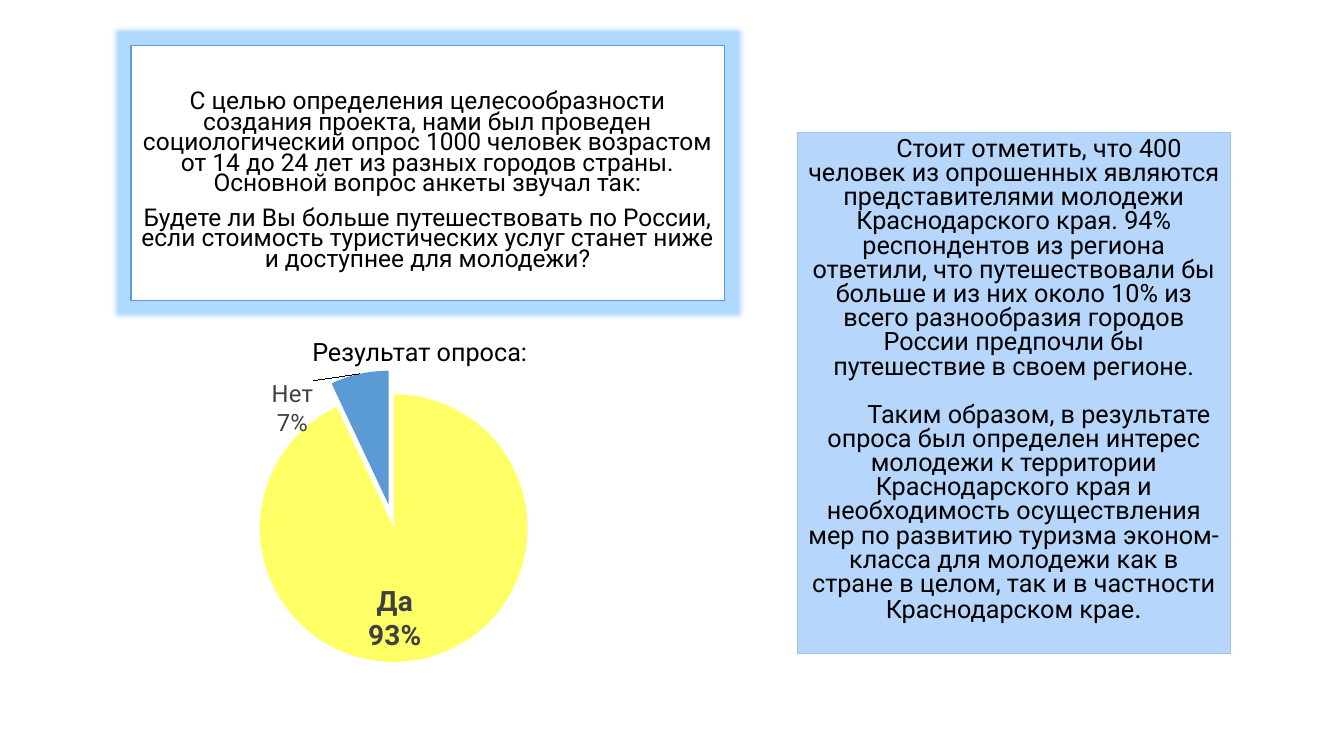
from lxml import etree
from pptx import Presentation
from pptx.chart.data import CategoryChartData
from pptx.dml.color import RGBColor
from pptx.enum.chart import XL_CHART_TYPE, XL_LABEL_POSITION
from pptx.enum.shapes import MSO_SHAPE
from pptx.enum.text import MSO_ANCHOR, PP_ALIGN
from pptx.oxml import parse_xml
from pptx.oxml.ns import nsdecls, qn
from pptx.util import Cm, Pt

RECT = MSO_SHAPE.RECTANGLE
PIE = XL_CHART_TYPE.PIE
IN_END = XL_LABEL_POSITION.INSIDE_END
OUT_END = XL_LABEL_POSITION.OUTSIDE_END
TOP = MSO_ANCHOR.TOP
MID = PP_ALIGN.CENTER

FONT = "Roboto"
BLACK = RGBColor(0x00, 0x00, 0x00)
WHITE = RGBColor(0xFF, 0xFF, 0xFF)
GREY = RGBColor(0x40, 0x40, 0x40)
BLUE = RGBColor(0x5B, 0x9B, 0xD5)
PALE = RGBColor(0x9D, 0xC3, 0xE6)
SKY = RGBColor(0x76, 0xB2, 0xFA)
HALO = RGBColor(0xAF, 0xD9, 0xFF)
YELLOW = RGBColor(0xFF, 0xFF, 0x66)

SURVEY = [
    "С целью определения целесообразности создания проекта, нами был проведен "
    "социологический опрос 1000 человек возрастом от 14 до 24 лет из разных "
    "городов страны. Основной вопрос анкеты звучал так:",
    "Будете ли Вы больше путешествовать по России, если стоимость туристических "
    "услуг станет ниже и доступнее для молодежи?",
]
REGION = [
    "Стоит отметить, что 400 человек из опрошенных являются представителями "
    "молодежи Краснодарского края. 94% респондентов из региона ответили, что "
    "путешествовали бы больше и из них около 10% из всего разнообразия городов "
    "России предпочли бы путешествие в своем регионе.",
    "Таким образом, в результате опроса был определен интерес молодежи к "
    "территории Краснодарского края и необходимость осуществления мер по "
    "развитию туризма эконом-класса для молодежи как в стране в целом, так и "
    "в частности Краснодарском крае",
]


def set_font(font, size, color=BLACK, bold=False):
    font.name, font.size, font.bold = FONT, Pt(size), bold
    font.color.rgb = color


def add_box(slide, place, fill, line, width):
    box = slide.shapes.add_shape(RECT, *map(Cm, place))
    box.shadow.inherit = False
    box.fill.solid()
    box.fill.fore_color.rgb = fill
    box.line.color.rgb = line
    box.line.width = Pt(width)
    box.text_frame.word_wrap = True
    box.text_frame.vertical_anchor = TOP
    return box


def add_text(frame, texts, size, spacing, gap, indent=0):
    for i, text in enumerate(texts):
        para = frame.add_paragraph() if i else frame.paragraphs[0]
        para.add_run().text = text
        para.alignment = MID
        para.line_spacing = spacing
        para.space_before = Pt(gap if i else 0)
        if indent:
            para._p.get_or_add_pPr().set("indent", str(Cm(indent)))
        set_font(para.font, size)


def add_glow(box, color, radius):
    effects = box._element.spPr.find(qn("a:effectLst"))
    glow = etree.SubElement(effects, qn("a:glow"), rad=str(Cm(radius)))
    etree.SubElement(glow, qn("a:srgbClr"), val=str(color))


def set_alpha(box, percent):
    color = box._element.spPr.find(qn("a:solidFill"))[0]
    etree.SubElement(color, qn("a:alpha"), val=str(percent * 1000))


def make_layout(modes, **sizes):
    parts = "".join(f'<c:{key} val="{val}"/>' for key, val in sizes.items())
    return parse_xml(f'<c:layout {nsdecls("c")}><c:manualLayout>{modes}{parts}'
                     "</c:manualLayout></c:layout>")


def set_plot(chart, x, y, w, h):
    area = chart._chartSpace.chart.plotArea
    for old in area.findall(qn("c:layout")):
        area.remove(old)
    modes = '<c:layoutTarget val="inner"/><c:xMode val="edge"/><c:yMode val="edge"/>'
    area.insert(0, make_layout(modes, x=x, y=y, w=w, h=h))


def style_slice(point, color, size, bold, place):
    point.format.fill.solid()
    point.format.fill.fore_color.rgb = color
    set_font(point.data_label.font, size, GREY, bold)
    point.data_label.position = place


def add_pie(slide, place):
    data = CategoryChartData()
    data.categories = ["Да", "Нет"]
    data.add_series("Series 1", (93, 7))
    chart = slide.shapes.add_chart(PIE, *map(Cm, place), data).chart
    chart.has_legend = chart.has_title = False
    set_font(chart.font, 10)
    set_plot(chart, 0.16, 0.28, 0.54, 0.58)

    series = chart.plots[0].series[0]
    style_slice(series.points[0], YELLOW, 20, True, IN_END)
    style_slice(series.points[1], BLUE, 17, False, OUT_END)

    # Pull the second slice out
    part = series._element.findall(qn("c:dPt"))[1]
    burst = etree.Element(qn("c:explosion"), val="18")
    part.find(qn("c:spPr")).addprevious(burst)

    # Category above percent in each label
    labels = list(series._element.iter(qn("c:dLbl")))
    for label in labels:
        for name, val in (("showVal", "0"), ("showCatName", "1"), ("showPercent", "1")):
            label.find(qn("c:" + name)).set("val", val)
        etree.SubElement(label, qn("c:separator")).text = "\n"

    # Move the small slice's label to its left
    labels[1].find(qn("c:idx")).addnext(make_layout("", x=-0.09, y=0.15))


def main():
    deck = Presentation()
    deck.slide_width, deck.slide_height = Cm(33.87), Cm(19.05)
    slide = deck.slides.add_slide(deck.slide_layouts[6])

    # Survey question
    survey = add_box(slide, (3.3, 1.14, 14.96, 6.43), WHITE, BLUE, 1)
    add_glow(survey, HALO, 0.25)
    survey.text_frame.margin_top = Cm(1.21)
    add_text(survey.text_frame, SURVEY, 17.5, 0.7, 10)

    # Survey result
    add_pie(slide, (4.55, 6.68, 12.5, 11.63))
    title = slide.shapes.add_textbox(Cm(7.62), Cm(8.36), Cm(6.35), Cm(1.02))
    title.text_frame.word_wrap = True
    head = title.text_frame.paragraphs[0]
    head.text = "Результат опроса:"
    set_font(head.font, 18)

    # Findings for the region
    region = add_box(slide, (20.09, 3.35, 10.92, 13.13), SKY, PALE, 0.75)
    set_alpha(region, 52)
    add_text(region.text_frame, REGION, 18, 0.8, 17, 1.27)
    stop = region.text_frame.paragraphs[-1].add_run()
    stop.text = "."
    stop.font.size = Pt(20)

    deck.save("out.pptx")


if __name__ == "__main__":
    main()
